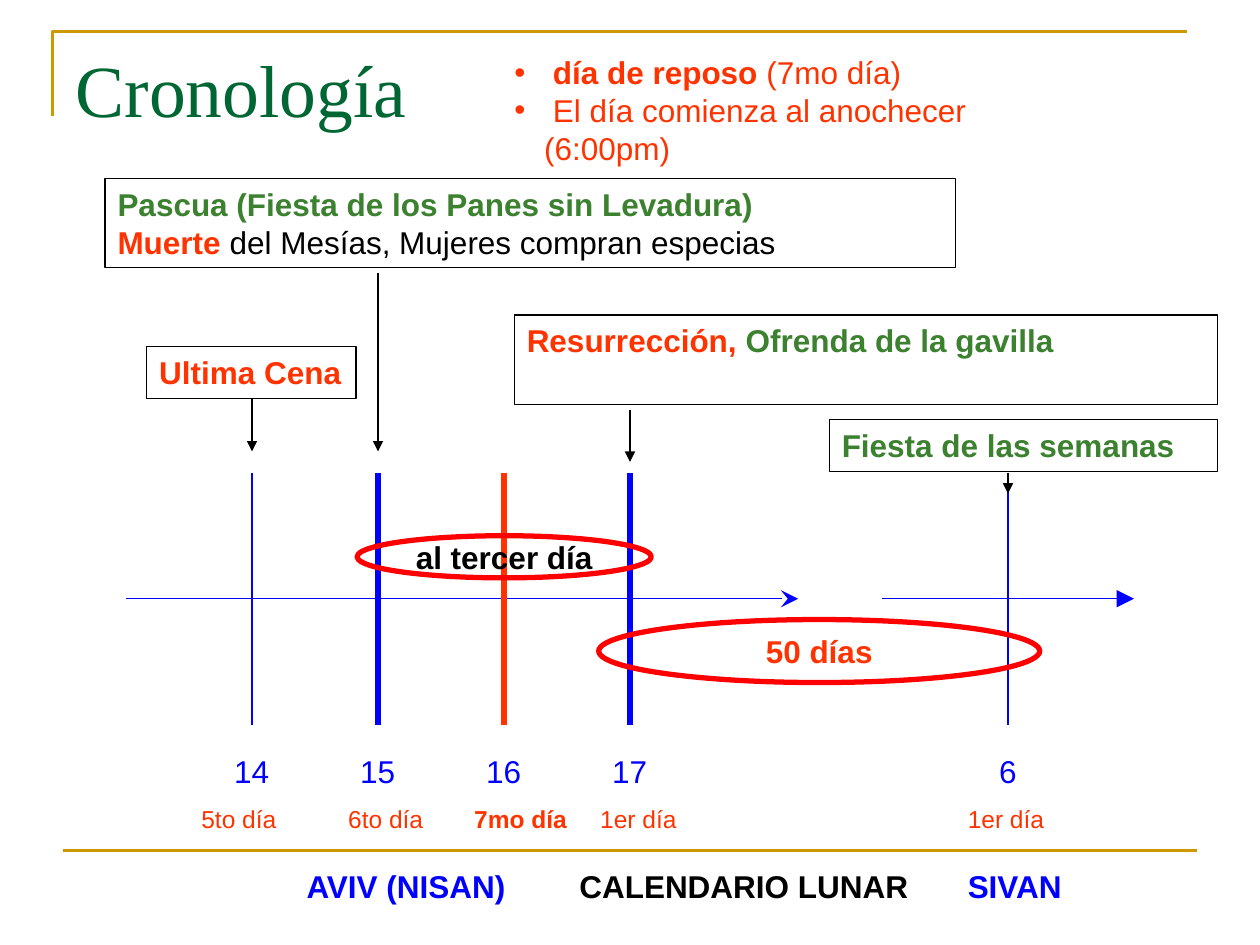
from lxml.etree import SubElement
from pptx import Presentation
from pptx.dml.color import RGBColor
from pptx.enum.shapes import MSO_CONNECTOR, MSO_SHAPE
from pptx.enum.text import MSO_ANCHOR, PP_ALIGN
from pptx.oxml.ns import qn
from pptx.util import Cm, Pt

COLORS = {
    "gold": "CC9900", "title": "006633", "blue": "0000FF", "orange": "FF3300",
    "red": "FF0000", "green": "3B812F", "black": "000000",
}


def add_text(box, *paragraphs, outline=None, line_width=0.75, shape_type=MSO_SHAPE.RECTANGLE,
             size=18, wrap=True, align=PP_ALIGN.LEFT, anchor=MSO_ANCHOR.TOP, bullet=None):
    """Each paragraph is a list of (text, color, bold) runs."""
    lengths = [Cm(value) for value in box]
    if outline:
        shape = slide.shapes.add_shape(shape_type, *lengths)
        shape.shadow.inherit = False
        shape.fill.background()
        shape.line.color.rgb = RGBColor.from_string(COLORS[outline])
        shape.line.width = Pt(line_width)
    else:
        shape = slide.shapes.add_textbox(*lengths)
    frame = shape.text_frame
    frame.word_wrap = wrap
    frame.vertical_anchor = anchor
    for index, runs in enumerate(paragraphs):
        paragraph = frame.add_paragraph() if index else frame.paragraphs[0]
        paragraph.alignment = align
        for text, color, bold in runs:
            run = paragraph.add_run()
            run.text = text
            run.font.name = "Arial"
            run.font.size = Pt(size)
            run.font.bold = bold
            run.font.color.rgb = RGBColor.from_string(COLORS[color])
        if bullet:
            properties = paragraph._p.get_or_add_pPr()
            properties.set("marL", str(Cm(0.6)))
            properties.set("indent", str(-Cm(0.6)))
            SubElement(properties, qn("a:buFont"), typeface="Arial")
            SubElement(properties, qn("a:buChar"), char=bullet)


def add_line(x1, y1, x2, y2, color, width=0.75, arrowhead=None, arrow_size="med"):
    line = slide.shapes.add_connector(MSO_CONNECTOR.STRAIGHT, Cm(x1), Cm(y1), Cm(x2), Cm(y2))
    line.line.color.rgb = RGBColor.from_string(COLORS[color])
    line.line.width = Pt(width)
    if arrowhead:
        SubElement(line.line._get_or_add_ln(), qn("a:tailEnd"),
                   type=arrowhead, w=arrow_size, len=arrow_size)
    SubElement(line._element.spPr, qn("a:effectLst"))


presentation = Presentation()
presentation.slide_width = Cm(25.4)
presentation.slide_height = Cm(19.05)
slide = presentation.slides.add_slide(presentation.slide_layouts[5])

# Title
title = slide.shapes.title
title.left, title.top, title.width, title.height = Cm(1.27), Cm(0.76), Cm(22.86), Cm(3.18)
title.text_frame.text = "Cronología"
title.text_frame.vertical_anchor = MSO_ANCHOR.TOP
title_paragraph = title.text_frame.paragraphs[0]
title_paragraph.alignment = PP_ALIGN.LEFT
title_paragraph.font.name = "Times New Roman"
title_paragraph.font.size = Pt(42)
title_paragraph.font.color.rgb = RGBColor.from_string(COLORS["title"])

# Gold corner and footer rule
builder = slide.shapes.build_freeform(Cm(1.06), Cm(2.33))
builder.add_line_segments([(Cm(1.06), Cm(0.63)), (Cm(23.92), Cm(0.63))], close=False)
corner = builder.convert_to_shape()
corner.shadow.inherit = False
corner.fill.background()
corner.line.color.rgb = RGBColor.from_string(COLORS["gold"])
corner.line.width = Pt(1.5)
add_line(1.27, 17.15, 24.13, 17.15, "gold", 1.5)

# Time axes
add_line(2.54, 12.07, 16.09, 12.07, "blue", arrowhead="stealth", arrow_size="lg")
add_line(17.78, 12.07, 22.86, 12.07, "blue", arrowhead="triangle", arrow_size="lg")

# Days: position, date, line colour and width, weekday and its left
days = [
    (5.08, "14", "blue", 0.75, "5to día", 3.81),
    (7.62, "15", "blue", 3, "6to día", 6.77),
    (10.16, "16", "orange", 3, "7mo día", 9.31),
    (12.7, "17", "blue", 3, "1er día", 11.85),
    (20.32, "6", "blue", 0.75, "1er día", 19.26),
]
for x, date, color, width, weekday, left in days:
    add_line(x, 9.53, x, 14.61, color, width)
    date_width = 0.5 + 0.36 * len(date)
    add_text((x - date_width / 2, 15.03, date_width, 1.02), [(date, "blue", False)], wrap=False)
    add_text((left, 16.09, 2.5, 0.85), [(weekday, "orange", weekday == "7mo día")], size=14)

# Month names
for left, width, name, color in [
    (5.93, 4.88, "AVIV (NISAN)", "blue"),
    (11.43, 7.5, "CALENDARIO LUNAR", "black"),
    (19.26, 2.8, "SIVAN", "blue"),
]:
    add_text((left, 17.36, width, 1.02), [(name, color, True)])

# Event boxes
add_text((2.96, 6.99, 4.22, 1.04), [("Ultima Cena", "orange", True)],
         outline="black", wrap=False)
add_text((2.12, 3.6, 17.15, 1.8),
         [("Pascua (Fiesta de los Panes sin Levadura)", "green", True)],
         [("Muerte", "orange", True),
          (" del Mesías, Mujeres compran especias", "black", False)],
         outline="black")
add_text((10.37, 6.35, 14.18, 1.8),
         [("Resurrección, ", "orange", True), ("Ofrenda de la gavilla", "green", True)],
         outline="black")
add_text((16.72, 8.46, 7.83, 1.04), [("Fiesta de las semanas", "green", True)],
         outline="black")

# Arrows from events to days
for x, top, bottom in [(7.62, 5.5, 9.1), (5.08, 8.04, 9.1), (20.32, 9.53, 9.95), (12.7, 8.26, 9.31)]:
    add_line(x, top, x, bottom, "black", arrowhead="triangle")

# Spans between days
for box, text, color in [
    ((7.2, 10.8, 5.93, 0.85), "al tercer día", "black"),
    ((12.07, 12.49, 8.89, 1.27), "50 días", "orange"),
]:
    add_text(box, [(text, color, True)], outline="red", line_width=3, wrap=False,
             shape_type=MSO_SHAPE.OVAL, align=PP_ALIGN.CENTER, anchor=MSO_ANCHOR.MIDDLE)

# Notes on the day of rest
add_text((10.12, 0.95, 11.94, 1.78),
         [(" ", "orange", False), ("día de reposo", "orange", True), (" (7mo día)", "orange", False)],
         [(" El día comienza al anochecer (6:00pm)", "orange", False)],
         bullet="•")

presentation.save("out.pptx")
